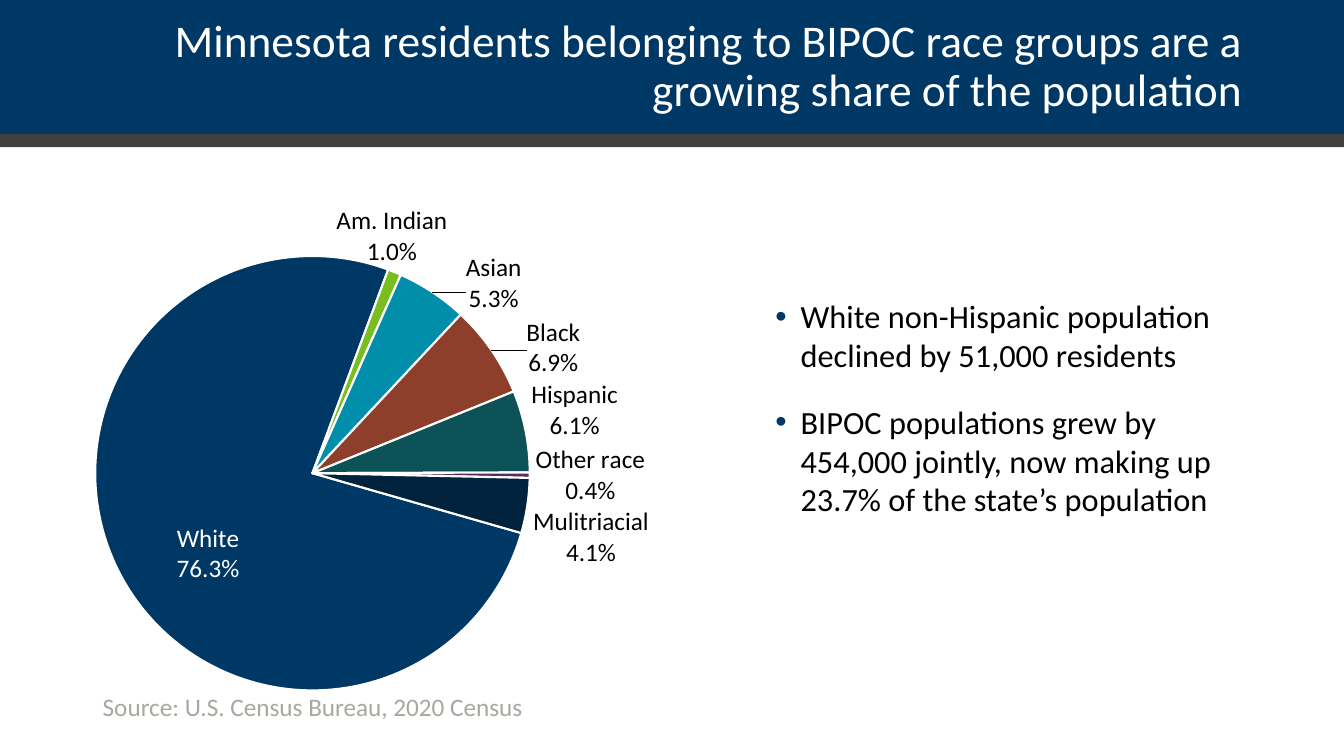
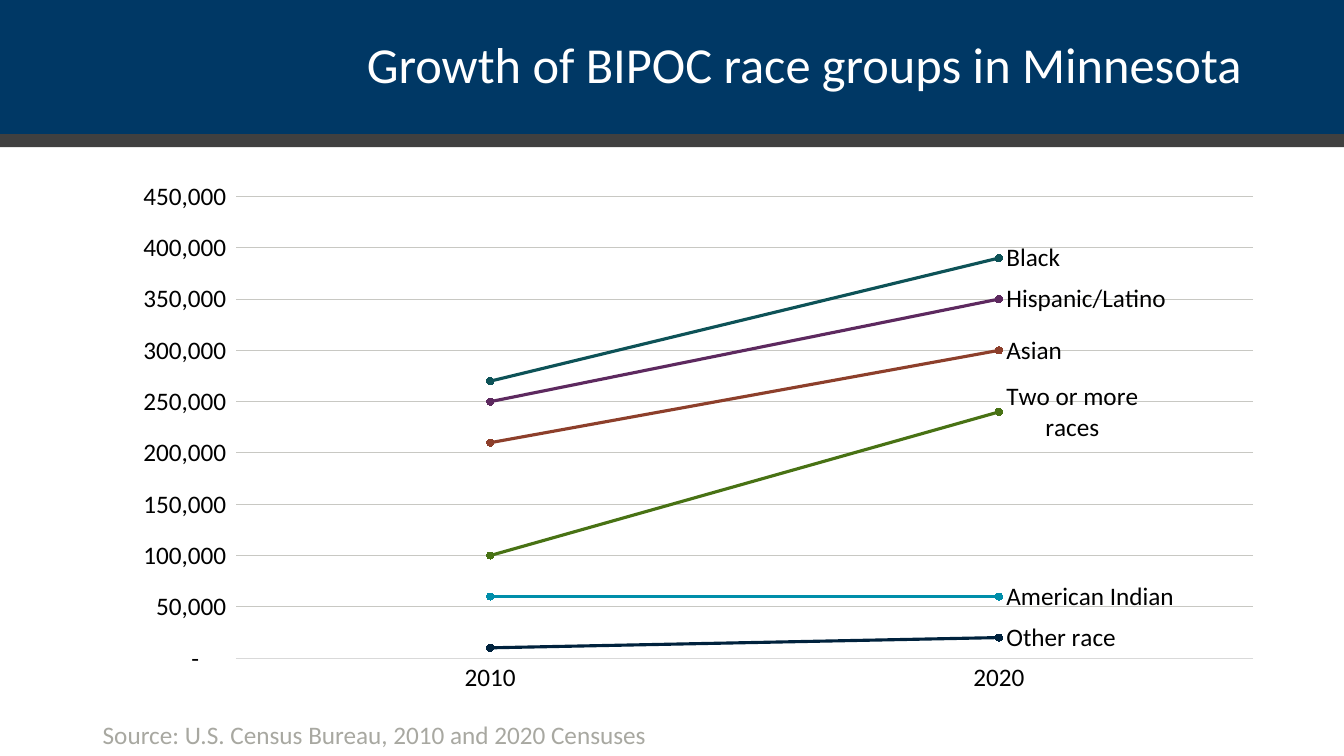
from lxml import etree
from pptx import Presentation
from pptx.chart.data import CategoryChartData
from pptx.dml.color import RGBColor
from pptx.enum.chart import XL_CHART_TYPE, XL_LABEL_POSITION, XL_MARKER_STYLE, XL_TICK_MARK
from pptx.enum.shapes import MSO_SHAPE
from pptx.enum.text import MSO_ANCHOR, MSO_AUTO_SIZE, PP_ALIGN
from pptx.oxml.ns import qn
from pptx.util import Inches, Pt

NAVY = RGBColor(0x00, 0x38, 0x65)
CHARCOAL = RGBColor(0x40, 0x40, 0x40)
WHITE = RGBColor(0xFF, 0xFF, 0xFF)
BLACK = RGBColor(0x00, 0x00, 0x00)
SOURCE_GRAY = RGBColor(0xA8, 0xA8, 0xA1)
GRID_GRAY = RGBColor(0xC8, 0xC8, 0xC3)
AXIS_GRAY = RGBColor(0xD9, 0xD9, 0xD9)
LIME = RGBColor(0x78, 0xBE, 0x21)
TEAL = RGBColor(0x00, 0x8E, 0xAA)
RUST = RGBColor(0x8D, 0x3F, 0x2B)
PINE = RGBColor(0x0D, 0x52, 0x57)
PURPLE = RGBColor(0x5D, 0x29, 0x5F)
MIDNIGHT = RGBColor(0x00, 0x22, 0x3D)
OLIVE = RGBColor(0x48, 0x72, 0x14)

FONT = "Calibri"
TITLE_AND_CONTENT, TITLE_ONLY = 1, 5


def style_font(font, size, color):
    font.name, font.size, font.color.rgb = FONT, Pt(size), color


def place(shape, left, top, width, height):
    shape.left, shape.top = Inches(left), Inches(top)
    shape.width, shape.height = Inches(width), Inches(height)


def manual_layout(x, y, width=None, height=None):
    """Return a c:layout element; without a size it is a label offset."""
    layout = etree.Element(qn("c:layout"))
    manual = etree.SubElement(layout, qn("c:manualLayout"))
    settings = [("x", x), ("y", y)]
    if width:
        settings = [("layoutTarget", "inner"), ("xMode", "edge"), ("yMode", "edge"),
                    *settings, ("w", width), ("h", height)]
    for tag, value in settings:
        etree.SubElement(manual, qn(f"c:{tag}")).set("val", str(value))
    return layout


def set_plot_area(chart, box, plot_box):
    """Place the plot inside its chart; both boxes are in inches."""
    plot_area = chart.plots[0]._element.getparent()
    for old in plot_area.findall(qn("c:layout")):
        plot_area.remove(old)
    chart_size = box[2:] * 2
    shares = [length / side for length, side in zip(plot_box, chart_size)]
    plot_area.insert(0, manual_layout(*shares))


def label_point(series, index, color, position, shows, offset=None, number_format=None):
    """Label one point with the parts named in shows."""
    label = series.points[index].data_label
    style_font(label.font, 18, color)
    label.position = position
    node = series.data_labels._element.xpath(f'c:dLbl[c:idx/@val="{index}"]')[0]
    for flag in ("showVal", "showCatName", "showSerName"):
        node.find(qn(f"c:{flag}")).set("val", str(int(flag in shows)))
    if number_format:
        number = etree.Element(qn("c:numFmt"), formatCode=number_format, sourceLinked="0")
        node.insert(1, number)
    if offset:
        node.insert(1, manual_layout(*offset))
    if len(shows) > 1:
        etree.SubElement(node, qn("c:separator")).text = "\n"


class Deck:
    def __init__(self):
        self.presentation = Presentation()
        self.presentation.slide_width = Inches(13.33)
        self.presentation.slide_height = Inches(7.5)
        self.slide = None

    def add_slide(self, layout, title, title_size):
        layouts = self.presentation.slide_layouts
        self.slide = self.presentation.slides.add_slide(layouts[layout])
        # Header bands sit behind the title
        self.band(1.33, 0.13, CHARCOAL)
        self.band(0, 1.33, NAVY)
        heading = self.slide.shapes.title
        place(heading, 0.92, 0.17, 11.5, 1)
        frame = heading.text_frame
        frame.text = title
        frame.auto_size = MSO_AUTO_SIZE.NONE
        frame.vertical_anchor = MSO_ANCHOR.MIDDLE
        paragraph = frame.paragraphs[0]
        paragraph.alignment = PP_ALIGN.RIGHT
        paragraph.line_spacing = 0.9
        style_font(paragraph.runs[0].font, title_size, WHITE)

    def band(self, top, height, color):
        band = self.slide.shapes.add_shape(
            MSO_SHAPE.RECTANGLE, 0, Inches(top), Inches(13.33), Inches(height))
        band.shadow.inherit = False
        band.fill.solid()
        band.fill.fore_color.rgb = color
        band.line.fill.background()
        self.slide.shapes._spTree.insert(2, band._element)

    def source(self, text, top):
        note = self.slide.shapes.add_textbox(
            Inches(0.92), Inches(top), Inches(8.21), Inches(0.4))
        note.text_frame.word_wrap = True
        note.text_frame.text = text
        style_font(note.text_frame.paragraphs[0].runs[0].font, 18, SOURCE_GRAY)

    def bullets(self, items, box):
        body = self.slide.placeholders[1]
        place(body, *box)
        body.fill.solid()
        body.fill.fore_color.rgb = WHITE
        frame = body.text_frame
        frame.text = "\n".join(items)
        frame.auto_size = MSO_AUTO_SIZE.NONE
        for paragraph in frame.paragraphs:
            paragraph.space_before = paragraph.space_after = Pt(10)
            style_font(paragraph.runs[0].font, 23.1, BLACK)
            properties = paragraph._p.get_or_add_pPr()
            properties.set("marL", str(Inches(0.25)))
            properties.set("indent", str(-Inches(0.25)))
            bullet_color = etree.SubElement(properties, qn("a:buClr"))
            etree.SubElement(bullet_color, qn("a:srgbClr")).set("val", str(NAVY))
            etree.SubElement(properties, qn("a:buChar")).set("char", "•")

    def chart(self, kind, categories, series, box, plot_box):
        data = CategoryChartData()
        data.categories = categories
        for name, values in series:
            data.add_series(name, values)
        chart = self.slide.shapes.add_chart(kind, *map(Inches, box), data).chart
        chart.has_title = chart.has_legend = False
        style_font(chart.font, 18, BLACK)
        set_plot_area(chart, box, plot_box)
        return chart

    def pie(self, slices, start_angle, box, plot_box):
        """Slices hold name, value, colour, label colour, label position and offset."""
        chart = self.chart(XL_CHART_TYPE.PIE, [part[0] for part in slices],
                           [("Series 1", [part[1] for part in slices])], box, plot_box)
        pie = chart.plots[0]
        pie.vary_by_categories = True
        angle = pie._element.find(qn("c:firstSliceAng"))
        if angle is None:
            angle = etree.SubElement(pie._element, qn("c:firstSliceAng"))
        angle.set("val", str(start_angle))
        shares = pie.series[0]
        for index, (_, _, color, label_color, position, offset) in enumerate(slices):
            look = shares.points[index].format
            look.fill.solid()
            look.fill.fore_color.rgb = color
            look.line.color.rgb = WHITE
            look.line.width = Pt(1.5)
            label_point(shares, index, label_color, position,
                        ("showVal", "showCatName"), offset, '0.0"%"')

    def line_chart(self, categories, groups, box, plot_box):
        """Groups hold name, values and colour; the last point carries the name."""
        chart = self.chart(XL_CHART_TYPE.LINE_MARKERS, categories,
                           [group[:2] for group in groups], box, plot_box)
        years, residents = chart.category_axis, chart.value_axis
        for axis in (years, residents):
            axis.major_tick_mark = axis.minor_tick_mark = XL_TICK_MARK.NONE
            style_font(axis.tick_labels.font, 18, BLACK)
        years.format.line.color.rgb = AXIS_GRAY
        years.format.line.width = Pt(0.75)
        residents.minimum_scale, residents.maximum_scale = 0, 450000
        residents.major_unit = 50000
        residents.format.line.fill.background()
        residents.major_gridlines.format.line.color.rgb = GRID_GRAY
        residents.major_gridlines.format.line.width = Pt(0.75)
        residents.tick_labels.number_format = '_(* #,##0_);_(* \\(#,##0\\);_(* "-"??_);_('
        residents.tick_labels.number_format_is_linked = False
        for group, (_, _, color) in zip(chart.plots[0].series, groups):
            group.smooth = False
            group.format.line.color.rgb = color
            group.format.line.width = Pt(2.25)
            group.marker.style = XL_MARKER_STYLE.CIRCLE
            group.marker.size = 5
            group.marker.format.fill.solid()
            group.marker.format.fill.fore_color.rgb = color
            group.marker.format.line.color.rgb = color
            label_point(group, len(categories) - 1, BLACK,
                        XL_LABEL_POSITION.RIGHT, ("showSerName",))
            group.data_labels.show_value = False


def main():
    deck = Deck()

    # Slide 1: shares of the population
    deck.add_slide(TITLE_AND_CONTENT, "Minnesota residents belonging to BIPOC race groups "
                   "are a growing share of the population", 32.4)
    deck.source("Source: U.S. Census Bureau, 2020 Census", 6.81)
    deck.bullets(["White non-Hispanic population declined by 51,000 residents",
                  "BIPOC populations grew by 454,000 jointly, now making up "
                  "23.7% of the state’s population"], (7.59, 2.89, 4.69, 2.85))
    outside = XL_LABEL_POSITION.OUTSIDE_END
    deck.pie([
        ("White", 76.3, NAVY, WHITE, XL_LABEL_POSITION.CENTER, (-0.01, 0.06)),
        ("Am. Indian", 1, LIME, BLACK, outside, (-0.08, 0)),
        ("Asian", 5.3, TEAL, BLACK, outside, (0.04, 0.05)),
        ("Black", 6.9, RUST, BLACK, outside, (0.04, 0.06)),
        ("Hispanic", 6.1, PINE, BLACK, outside, (0, 0.02)),
        ("Other race", 0.4, PURPLE, BLACK, outside, None),
        ("Mulitriacial", 4.1, MIDNIGHT, BLACK, outside, None),
    ], 106, (-0.49, 1.82, 7.48, 5.19), (1.43, 0.72, 4.32, 4.31))

    # Slide 2: growth from 2010 to 2020
    deck.add_slide(TITLE_ONLY, "Growth of BIPOC race groups in Minnesota", 36)
    deck.source("Source: U.S. Census Bureau, 2010 and 2020 Censuses", 7.09)
    deck.line_chart(["2010", "2020"], [
        ("American Indian", (60000, 60000), TEAL),
        ("Asian", (210000, 300000), RUST),
        ("Black", (270000, 390000), PINE),
        ("Hispanic/Latino", (250000, 350000), PURPLE),
        ("Other race", (10000, 20000), MIDNIGHT),
        ("Two or more races", (100000, 240000), OLIVE),
    ], (1.12, 1.73, 11.5, 5.36), (1.22, 0.22, 10.09, 4.58))

    deck.presentation.save("out.pptx")


if __name__ == "__main__":
    main()
